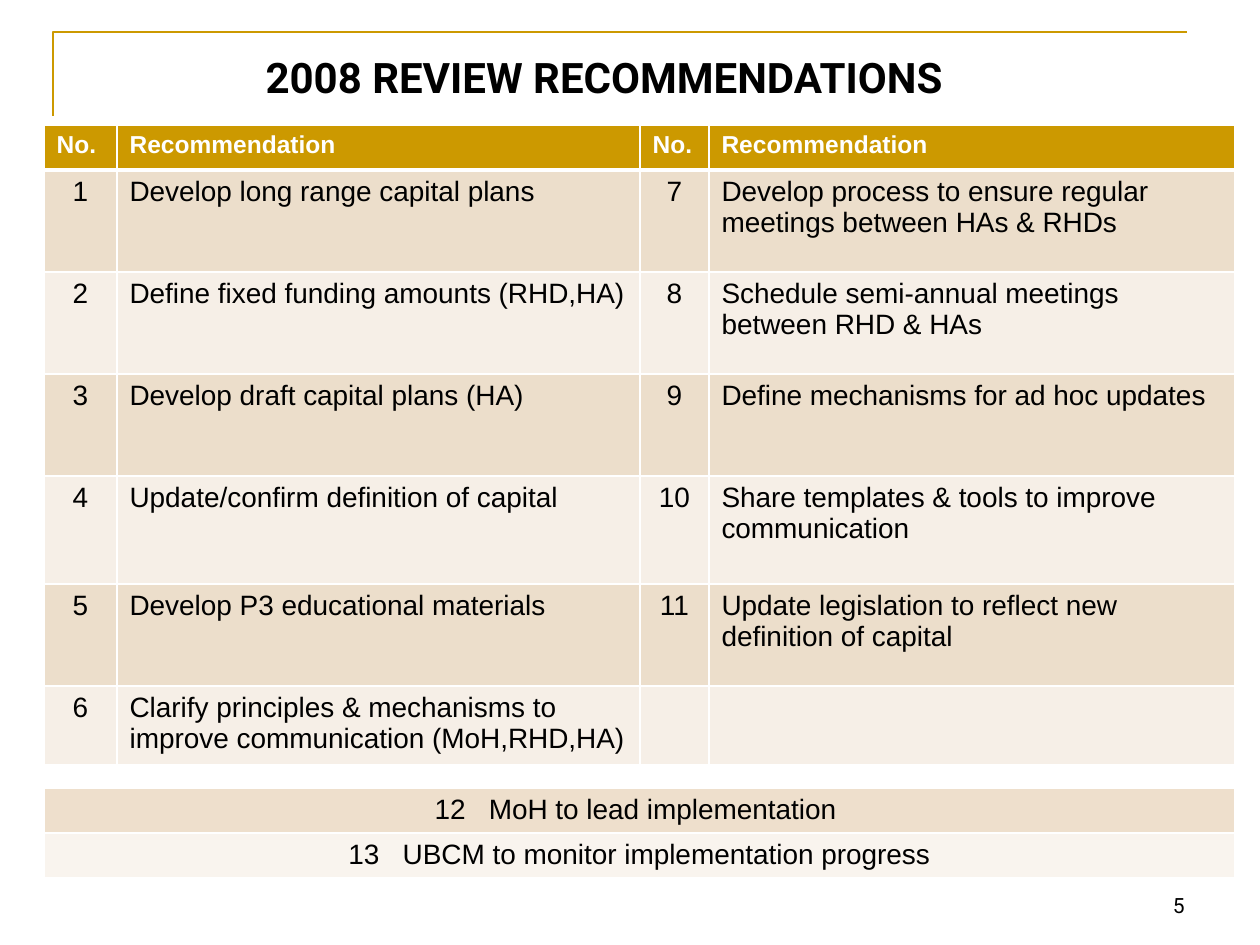
from lxml import etree
from pptx import Presentation
from pptx.dml.color import RGBColor
from pptx.enum.text import MSO_ANCHOR, PP_ALIGN
from pptx.oxml.ns import qn
from pptx.util import Pt

LEFT, CENTER, RIGHT = PP_ALIGN.LEFT, PP_ALIGN.CENTER, PP_ALIGN.RIGHT
TOP, BOTTOM = MSO_ANCHOR.TOP, MSO_ANCHOR.BOTTOM
EMU_PER_PX = 914400 / 126
GOLD, WHITE, BLACK = "CC9900", "FFFFFF", "000000"
BANDS = ["ECDECB", "F6EFE7"]


def px(length):
    return round(length * EMU_PER_PX)


def add_run(paragraph, text, size, font, color, bold=False, align=LEFT):
    paragraph.alignment = align
    run = paragraph.add_run()
    run.text = text
    run.font.size = Pt(size)
    run.font.name = font
    run.font.bold = bold
    run.font.color.rgb = RGBColor.from_string(color)


presentation = Presentation()
presentation.slide_width, presentation.slide_height = px(1260), px(945)
slide = presentation.slides.add_slide(presentation.slide_layouts[5])

# Corner rule around the title
builder = slide.shapes.build_freeform(px(53), px(116))
builder.add_line_segments([(px(53), px(32)), (px(1187), px(32))], close=False)
corner = builder.convert_to_shape()
corner.shadow.inherit = False
corner.fill.background()
corner.line.color.rgb = RGBColor.from_string(GOLD)
corner.line.width = Pt(1.5)

# Title
title = slide.shapes.title
title.left, title.top, title.width, title.height = px(253), px(45), px(814), px(63)
title.fill.solid()
title.fill.fore_color.rgb = RGBColor.from_string(WHITE)
title.text_frame.word_wrap = True
title.text_frame.vertical_anchor = TOP
add_run(title.text_frame.paragraphs[0], "2008 REVIEW RECOMMENDATIONS",
        24, "Roboto", BLACK, bold=True)

# Table contents: header, paired recommendations, gap, full-width rows
recommendations = [
    "Develop long range capital plans",
    "Define fixed funding amounts (RHD,HA)",
    "Develop draft capital plans (HA)",
    "Update/confirm definition of capital",
    "Develop P3 educational materials",
    "Clarify principles & mechanisms to improve communication (MoH,RHD,HA)",
    "Develop process to ensure regular meetings between HAs & RHDs",
    "Schedule semi-annual meetings between RHD & HAs",
    "Define mechanisms for ad hoc updates",
    "Share templates & tools to improve communication",
    "Update legislation to reflect new definition of capital",
]
numbered = [[str(number), text] for number, text in enumerate(recommendations, 1)]
numbered.append(["", ""])
rows = [["No.", "Recommendation"] * 2]
rows += [left + right for left, right in zip(numbered[:6], numbered[6:])]
gap_row = len(rows)
rows.append([""] * 4)
rows.append(["12   MoH to lead implementation "])
rows.append(["13   UBCM to monitor implementation progress"])
fills = [GOLD] + BANDS * 3 + [None, "EEDFCC", "F9F4EE"]

# Table grid
column_widths = [73, 523, 69, 526]
row_heights = [45, 102, 102, 102, 108, 102, 79, 23, 45, 45]
table = slide.shapes.add_table(len(rows), 4, px(44), px(125),
                               px(sum(column_widths)), px(sum(row_heights))).table
for column, width in zip(table.columns, column_widths):
    column.width = px(width)
for row, height in zip(table.rows, row_heights):
    row.height = px(height)

# Table cells
for row_index, (texts, fill) in enumerate(zip(rows, fills)):
    full_width = len(texts) == 1
    if full_width:
        table.cell(row_index, 0).merge(table.cell(row_index, 3))
    for column_index, text in enumerate(texts):
        cell = table.cell(row_index, column_index)
        paragraph = cell.text_frame.paragraphs[0]
        if fill:
            cell.fill.solid()
            cell.fill.fore_color.rgb = RGBColor.from_string(fill)
        else:
            cell.fill.background()
        if row_index == gap_row:
            cell.margin_top = cell.margin_bottom = 0
            etree.SubElement(paragraph._p, qn("a:endParaRPr"), sz="800")
        if row_index == 0:
            add_run(paragraph, text, 14, "Arial", WHITE, bold=True)
        elif text:
            centered = full_width or column_index % 2 == 0
            add_run(paragraph, text, 16, "Arial", BLACK,
                    align=CENTER if centered else LEFT)

        # White borders, heavier under the header
        heavy_side = {0: "lnB", 1: "lnT"}.get(row_index)
        properties = cell._tc.get_or_add_tcPr()
        for position, side in enumerate(["lnL", "lnR", "lnT", "lnB"]):
            width = Pt(3 if side == heavy_side else 1)
            border = etree.Element(qn("a:" + side), w=str(width))
            solid = etree.SubElement(border, qn("a:solidFill"))
            etree.SubElement(solid, qn("a:srgbClr"), val=WHITE)
            properties.insert(position, border)

# Page number
page_number = slide.shapes.add_textbox(px(903), px(861), px(294), px(63))
page_number.text_frame.word_wrap = True
page_number.text_frame.vertical_anchor = BOTTOM
add_run(page_number.text_frame.paragraphs[0], "5", 12, "Roboto", BLACK, align=RIGHT)

presentation.save("out.pptx")
